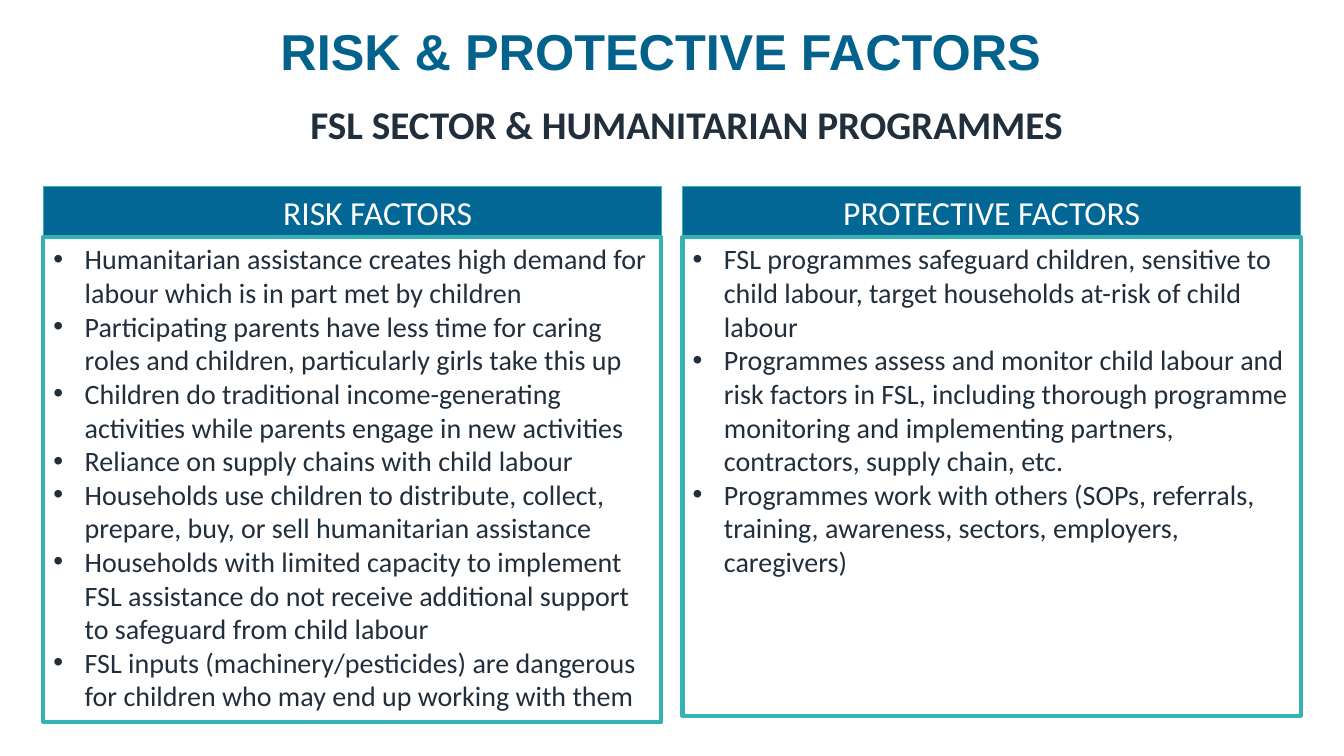
from lxml import etree
from pptx import Presentation
from pptx.dml.color import RGBColor
from pptx.enum.text import MSO_ANCHOR, MSO_AUTO_SIZE, PP_ALIGN
from pptx.oxml.ns import qn
from pptx.util import Pt

CENTER, LEFT = PP_ALIGN.CENTER, PP_ALIGN.LEFT
TOP, MIDDLE = MSO_ANCHOR.TOP, MSO_ANCHOR.MIDDLE
NO_AUTOFIT = MSO_AUTO_SIZE.NONE

TITLE_BLUE = RGBColor(0x02, 0x62, 0x8C)
HEADER_BLUE = RGBColor(0x02, 0x67, 0x94)
TEAL = RGBColor(0x35, 0xB2, 0xB4)
INK = RGBColor(0x21, 0x2E, 0x3B)
WHITE = RGBColor(0xFF, 0xFF, 0xFF)

EMU_PER_PX = 9144
COMPARISON_LAYOUT = 4
COLUMN_LEFT, COLUMN_STEP, COLUMN_WIDTH = 43, 634, 613
HEADER_TOP, HEADER_HEIGHT = 185, 50
BULLET_INDENT, LEVEL_INDENT = 31, 50

RISKS = [
    "Humanitarian assistance creates high demand for labour which is in part met by children",
    "Participating parents have less time for caring roles and children, particularly girls take this up",
    "Children do traditional income-generating activities while parents engage in new activities",
    "Reliance on supply chains with child labour",
    "Households use children to distribute, collect, prepare, buy, or sell humanitarian assistance",
    "Households with limited capacity to implement FSL assistance do not receive additional support "
    "to safeguard from child labour",
    "FSL inputs (machinery/pesticides) are dangerous for children who may end up working with them",
]
PROTECTIONS = [
    "FSL programmes safeguard children, sensitive to child labour, target households at-risk of child labour",
    "Programmes assess and monitor child labour and risk factors in FSL, including thorough programme "
    "monitoring and implementing partners, contractors, supply chain, etc.",
    "Programmes work with others (SOPs, referrals, training, awareness, sectors, employers, caregivers)",
]
COLUMNS = [
    ("RISK FACTORS", LEVEL_INDENT, RISKS, 481),
    ("PROTECTIVE FACTORS", 0, PROTECTIONS, 475),
]


def px(length):
    return length * EMU_PER_PX


def set_bullet(properties, color):
    bullet_color = etree.SubElement(properties, qn("a:buClr"))
    etree.SubElement(bullet_color, qn("a:srgbClr"), val=str(color))
    etree.SubElement(properties, qn("a:buFont"), typeface="Arial")
    etree.SubElement(properties, qn("a:buChar"), char="•")


def write_text(frame, *texts, size, color, font="Calibri", bold=False, align=LEFT,
               anchor=TOP, spacing=1.0, indent=0, bullets=False):
    frame.word_wrap = True
    frame.auto_size = NO_AUTOFIT
    frame.vertical_anchor = anchor
    for position, text in enumerate(texts):
        paragraph = frame.add_paragraph() if position else frame.paragraphs[0]
        paragraph.alignment = align
        paragraph.line_spacing = spacing
        paragraph.space_before = paragraph.space_after = Pt(0)
        run = paragraph.add_run()
        run.text = text
        run.font.name, run.font.size, run.font.bold = font, Pt(size), bold
        run.font.color.rgb = color
        properties = paragraph._p.get_or_add_pPr()
        properties.set("marL", str(px(indent)))
        properties.set("indent", str(px(-indent) if bullets else 0))
        if bullets:
            set_bullet(properties, color)
        else:
            etree.SubElement(properties, qn("a:buNone"))


class FactorSlide:
    def __init__(self, deck):
        self.slide = deck.slides.add_slide(deck.slide_layouts[COMPARISON_LAYOUT])

    def place(self, index, left, top, width, height):
        holder = self.slide.placeholders[index]
        holder.left, holder.top = px(left), px(top)
        holder.width, holder.height = px(width), px(height)
        return holder

    def title(self, text):
        heading = self.place(0, 224, -19, 863, 145)
        write_text(heading.text_frame, text, size=36, color=TITLE_BLUE, font="Arial",
                   bold=True, align=CENTER, anchor=MIDDLE, spacing=0.9)

    def subtitle(self, text):
        subheading = self.slide.shapes.add_textbox(px(158), px(95), px(996), px(104))
        write_text(subheading.text_frame, text, size=28, color=INK, bold=True,
                   align=CENTER, indent=LEVEL_INDENT)

    def outline(self, panel, weight):
        panel.line.color.rgb = TEAL
        panel.line.width = Pt(weight)

    def header(self, index, left, text, indent):
        band = self.place(index, left, HEADER_TOP, COLUMN_WIDTH, HEADER_HEIGHT)
        band.fill.solid()
        band.fill.fore_color.rgb = HEADER_BLUE
        self.outline(band, 0.75)
        write_text(band.text_frame, text, size=24, color=WHITE, align=CENTER,
                   anchor=MIDDLE, indent=indent)

    def factors(self, index, left, items, height):
        panel = self.place(index, left, HEADER_TOP + HEADER_HEIGHT, COLUMN_WIDTH, height)
        self.outline(panel, 3)
        write_text(panel.text_frame, *items, size=20, color=INK,
                   indent=BULLET_INDENT, bullets=True)


def main():
    deck = Presentation()
    deck.slide_width, deck.slide_height = px(1333), px(750)
    page = FactorSlide(deck)
    page.title("RISK & PROTECTIVE FACTORS")
    page.subtitle("FSL SECTOR & HUMANITARIAN PROGRAMMES")
    for column, (heading, indent, items, height) in enumerate(COLUMNS):
        left = COLUMN_LEFT + column * COLUMN_STEP
        page.header(2 * column + 1, left, heading, indent)
        page.factors(2 * column + 2, left, items, height)
    deck.save("out.pptx")


if __name__ == "__main__":
    main()
